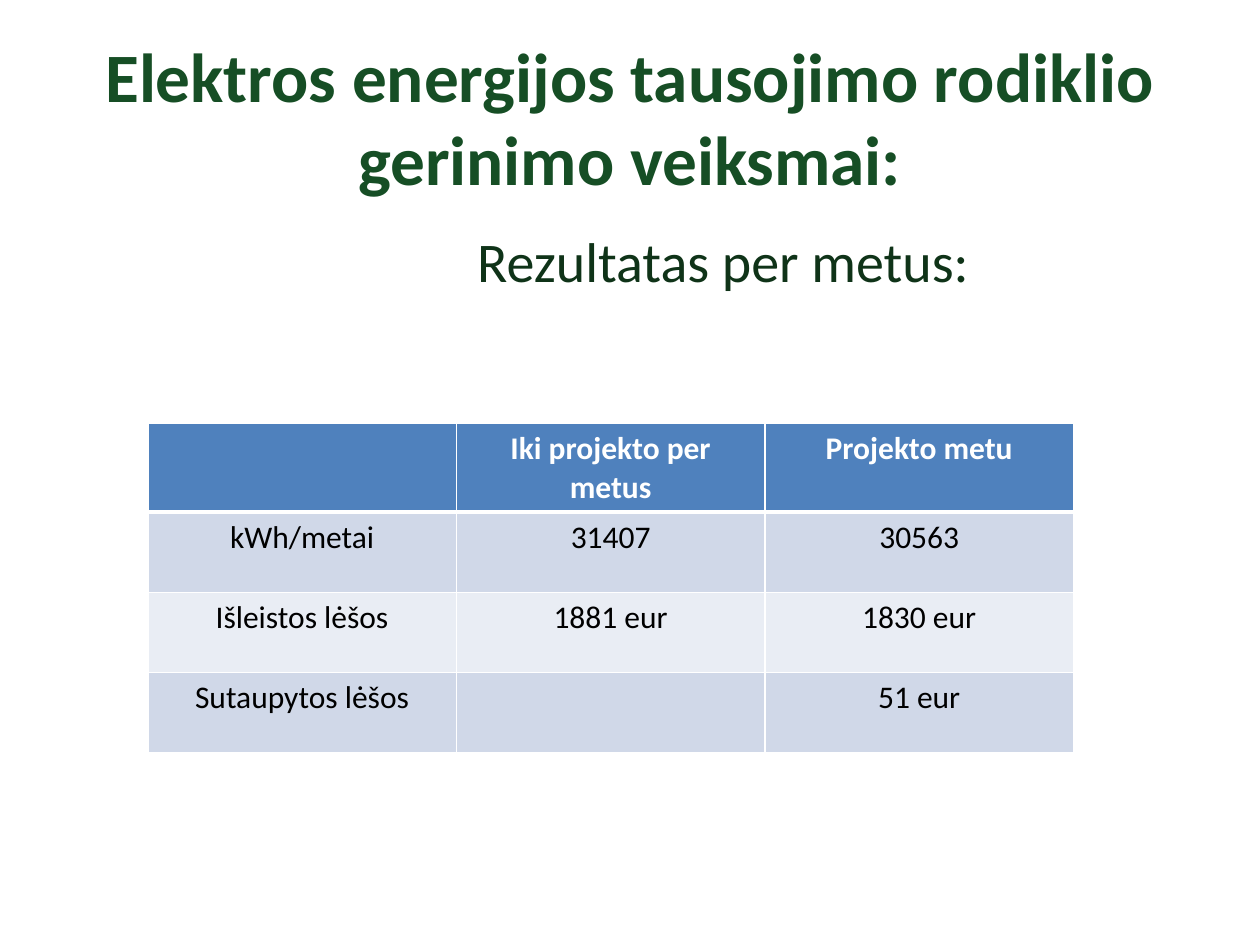
from dataclasses import dataclass

from lxml.etree import SubElement
from pptx import Presentation
from pptx.dml.color import RGBColor
from pptx.enum.text import MSO_ANCHOR, PP_ALIGN
from pptx.oxml.ns import qn
from pptx.util import Cm, Pt


@dataclass(frozen=True)
class Theme:
    """Colours and type sizes of the deck."""
    font: str = "Calibri"
    title: str = "164E25"
    body: str = "0F3318"
    header: str = "4F81BD"
    bands: tuple = ("D0D8E8", "E9EDF4")
    light: str = "FFFFFF"
    dark: str = "000000"
    title_size: float = 39.6
    body_size: float = 32
    table_size: float = 18
    thin: float = 1
    thick: float = 3


class Deck:
    """Holds the theme and the current page."""

    def __init__(self, theme, width, height):
        """Start a presentation of the given size."""
        self.theme = theme
        self.presentation = Presentation()
        self.presentation.slide_width = Cm(width)
        self.presentation.slide_height = Cm(height)
        self.page = None

    def add_page(self):
        """Add a blank page and make it current."""
        self.page = self.presentation.slides.add_slide(self.presentation.slide_layouts[6])

    def fill_paragraph(self, frame, text, size, color, bold=False, align=PP_ALIGN.LEFT):
        """Put one styled paragraph into a text frame."""
        paragraph = frame.paragraphs[0]
        paragraph.alignment = align
        if text:
            paragraph.add_run().text = text
        formats = {"name": self.theme.font, "size": Pt(size), "bold": bold}
        for font in [paragraph.font] + [span.font for span in paragraph.runs]:
            for name, value in formats.items():
                setattr(font, name, value)
            font.color.rgb = RGBColor.from_string(color)
        return paragraph

    def add_text(self, place, text, size, color, indent=0, anchor=MSO_ANCHOR.TOP, **style):
        """Add a wrapping text box."""
        frame = self.page.shapes.add_textbox(*map(Cm, place)).text_frame
        for name, value in {"word_wrap": True, "vertical_anchor": anchor}.items():
            setattr(frame, name, value)
        paragraph = self.fill_paragraph(frame, text, size, color, **style)
        if indent:
            paragraph._p.get_or_add_pPr().set("marL", str(Cm(indent)))

    def add_borders(self, cell, top, bottom):
        """Draw the four borders of a table cell."""
        thin = self.theme.thin
        widths = {"a:lnL": thin, "a:lnR": thin, "a:lnT": top, "a:lnB": bottom}
        for tag, width in widths.items():
            line = SubElement(cell._tc.get_or_add_tcPr(), qn(tag), w=str(Pt(width)))
            SubElement(SubElement(line, qn("a:solidFill")), qn("a:srgbClr"), val=self.theme.light)

    def add_table(self, place, row_height, rows):
        """Add a banded table with a header row."""
        theme = self.theme
        shape = self.page.shapes.add_table(len(rows), len(rows[0]), *map(Cm, place))
        for index, values in enumerate(rows):
            header = index == 0
            shape.table.rows[index].height = Cm(row_height)
            fill = theme.header if header else theme.bands[(index - 1) % 2]
            color = theme.light if header else theme.dark
            top = theme.thick if index == 1 else theme.thin
            bottom = theme.thick if header else theme.thin
            for column, text in enumerate(values):
                cell = shape.table.cell(index, column)
                self.add_borders(cell, top, bottom)
                cell.fill.solid()
                cell.fill.fore_color.rgb = RGBColor.from_string(fill)
                self.fill_paragraph(cell.text_frame, text, theme.table_size, color, header, PP_ALIGN.CENTER)


def main():
    """Build the page of electricity savings."""
    theme = Theme()
    deck = Deck(theme, 25.4, 19.05)
    deck.add_page()
    deck.add_text((1.27, 0.76, 22.86, 3.18), "Elektros energijos tausojimo rodiklio gerinimo veiksmai:",
                  theme.title_size, theme.title, anchor=MSO_ANCHOR.MIDDLE, bold=True, align=PP_ALIGN.CENTER)
    deck.add_text((1.27, 4.45, 22.86, 12.57), "Rezultatas per metus:",
                  theme.body_size, theme.body, indent=8.1)
    deck.add_table((2.98, 8.54, 18.66, 6.5), 1.62, [
        ("", "Iki projekto per metus", "Projekto metu"),
        ("kWh/metai", "31407", "30563"),
        ("Išleistos lėšos", "1881 eur", "1830 eur"),
        ("Sutaupytos lėšos", "", "51 eur"),
    ])
    deck.presentation.save("out.pptx")


if __name__ == "__main__":
    main()
